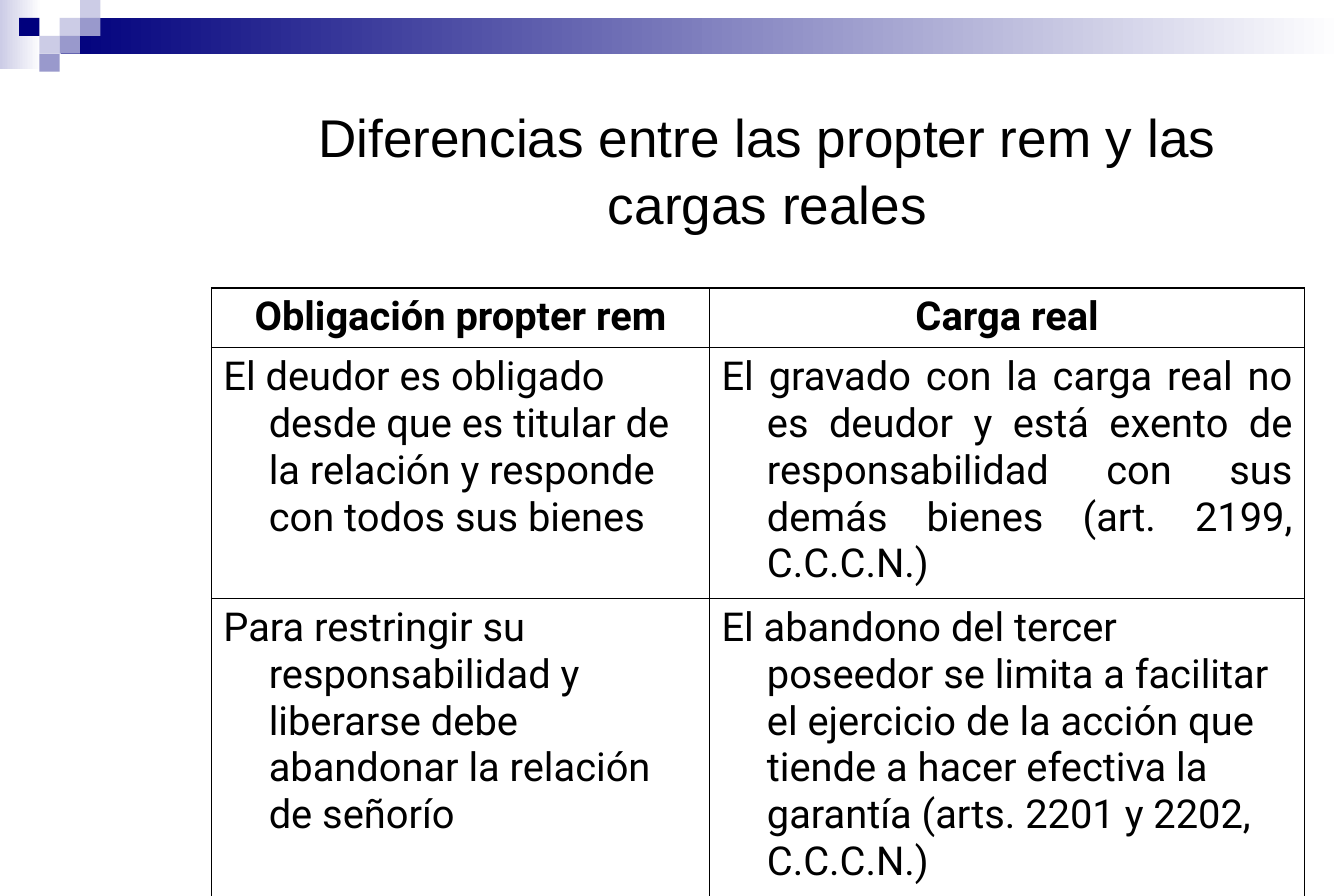
from lxml.etree import SubElement
from pptx import Presentation
from pptx.dml.color import RGBColor
from pptx.enum.shapes import MSO_SHAPE as Shape
from pptx.enum.text import MSO_ANCHOR as Anchor, PP_ALIGN as Align
from pptx.oxml.ns import qn
from pptx.util import Inches, Pt

BLACK = RGBColor(0x00, 0x00, 0x00)
WHITE = RGBColor(0xFF, 0xFF, 0xFF)
NAVY = RGBColor(0x00, 0x00, 0x7D)
LILAC = RGBColor(0x99, 0x99, 0xCC)
PALE = RGBColor(0xCC, 0xCC, 0xE6)

TITLE_FONT = {"name": "Arial", "size": Pt(32), "bold": False}
HEADER_FONT = {"name": "Roboto", "size": Pt(24), "bold": True}
BODY_FONT = {**HEADER_FONT, "bold": False}

TITLE = "Diferencias entre las propter rem y las cargas reales"
COMPARISON = [
    [("Obligación propter rem", Align.CENTER), ("Carga real", Align.CENTER)],
    [("El deudor es obligado desde que es titular de la relación y responde "
      "con todos sus bienes", Align.LEFT),
     ("El gravado con la carga real no es deudor y está exento de "
      "responsabilidad con sus demás bienes (art. 2199, C.C.C.N.)", Align.JUSTIFY)],
    [("Para restringir su responsabilidad y liberarse debe abandonar la "
      "relación de señorío", Align.LEFT),
     ("El abandono del tercer poseedor se limita a facilitar el ejercicio de "
      "la acción que tiende a hacer efectiva la garantía (arts. 2201 y 2202, "
      "C.C.C.N.)", Align.LEFT)],
]
COLUMN_WIDTHS = [4.17, 4.98]
ROW_HEIGHTS = [0.5, 2.1, 2.1]

# Column and row of each square in the corner mosaic
MOSAIC = [(2, 1, PALE), (3, 0, PALE), (3, 1, LILAC), (1, 2, PALE),
          (0, 1, NAVY), (2, 2, LILAC), (1, 3, LILAC)]


def write(paragraph, text, align, font_format):
    paragraph.alignment = align
    run = paragraph.add_run()
    run.text = text
    for attribute, value in font_format.items():
        setattr(run.font, attribute, value)
    run.font.color.rgb = BLACK


def add_block(slide, left, top, width, height, color, fade=False):
    block = slide.shapes.add_shape(
        Shape.RECTANGLE, Inches(left), Inches(top), Inches(width), Inches(height))
    block.shadow.inherit = False
    block.line.fill.background()
    if fade:
        block.fill.gradient()
        block.fill.gradient_angle = 0
        for stop, stop_color in zip(block.fill.gradient_stops, (color, WHITE)):
            stop.color.rgb = stop_color
    else:
        block.fill.solid()
        block.fill.fore_color.rgb = color


def add_banner(slide, left, top, width):
    # Fading bars
    add_block(slide, left, top, 0.35, 0.58, PALE, fade=True)
    add_block(slide, left + 0.51, top + 0.15, width - 0.51, 0.3, NAVY, fade=True)
    # Corner mosaic
    for column, row, color in MOSAIC:
        add_block(slide, left + 0.16 + column * 0.17, top + row * 0.15,
                  0.17, 0.15, color)


def add_title(slide, left, top, width, height):
    title = slide.shapes.add_textbox(
        Inches(left), Inches(top), Inches(width), Inches(height)).text_frame
    title.word_wrap = True
    title.vertical_anchor = Anchor.BOTTOM
    title.paragraphs[0].line_spacing = 1.05
    write(title.paragraphs[0], TITLE, Align.CENTER, TITLE_FONT)


def add_borders(cell):
    properties = cell._tc.get_or_add_tcPr()
    for position, side in enumerate(("a:lnL", "a:lnR", "a:lnT", "a:lnB")):
        border = SubElement(properties, qn(side), w=str(Pt(1)))
        fill = SubElement(border, qn("a:solidFill"))
        SubElement(fill, qn("a:srgbClr"), val=str(BLACK))
        # Borders come before the cell fill
        properties.insert(position, border)


def add_comparison(slide, left, top):
    table = slide.shapes.add_table(
        len(ROW_HEIGHTS), len(COLUMN_WIDTHS), Inches(left), Inches(top),
        Inches(sum(COLUMN_WIDTHS)), Inches(sum(ROW_HEIGHTS))).table
    table.first_row = table.horz_banding = False
    for column, width in zip(table.columns, COLUMN_WIDTHS):
        column.width = Inches(width)
    for row, height in zip(table.rows, ROW_HEIGHTS):
        row.height = Inches(height)

    for row_index, entries in enumerate(COMPARISON):
        for column_index, (text, align) in enumerate(entries):
            cell = table.cell(row_index, column_index)
            cell.fill.background()
            add_borders(cell)
            paragraph = cell.text_frame.paragraphs[0]
            write(paragraph, text, align, BODY_FONT if row_index else HEADER_FONT)
            # Hanging indent
            indent = paragraph._p.get_or_add_pPr()
            indent.set("marL", str(Inches(0.38)))
            indent.set("indent", str(-Inches(0.38)))


def main():
    deck = Presentation()
    deck.slide_width = Inches(11.25)
    deck.slide_height = Inches(7.5)
    slide = deck.slides.add_slide(deck.slide_layouts[6])
    add_banner(slide, 0, 0, 11.25)
    add_title(slide, 2.16, 0.76, 8.53, 1.26)
    add_comparison(slide, 1.77, 2.41)
    deck.save("out.pptx")


if __name__ == "__main__":
    main()
